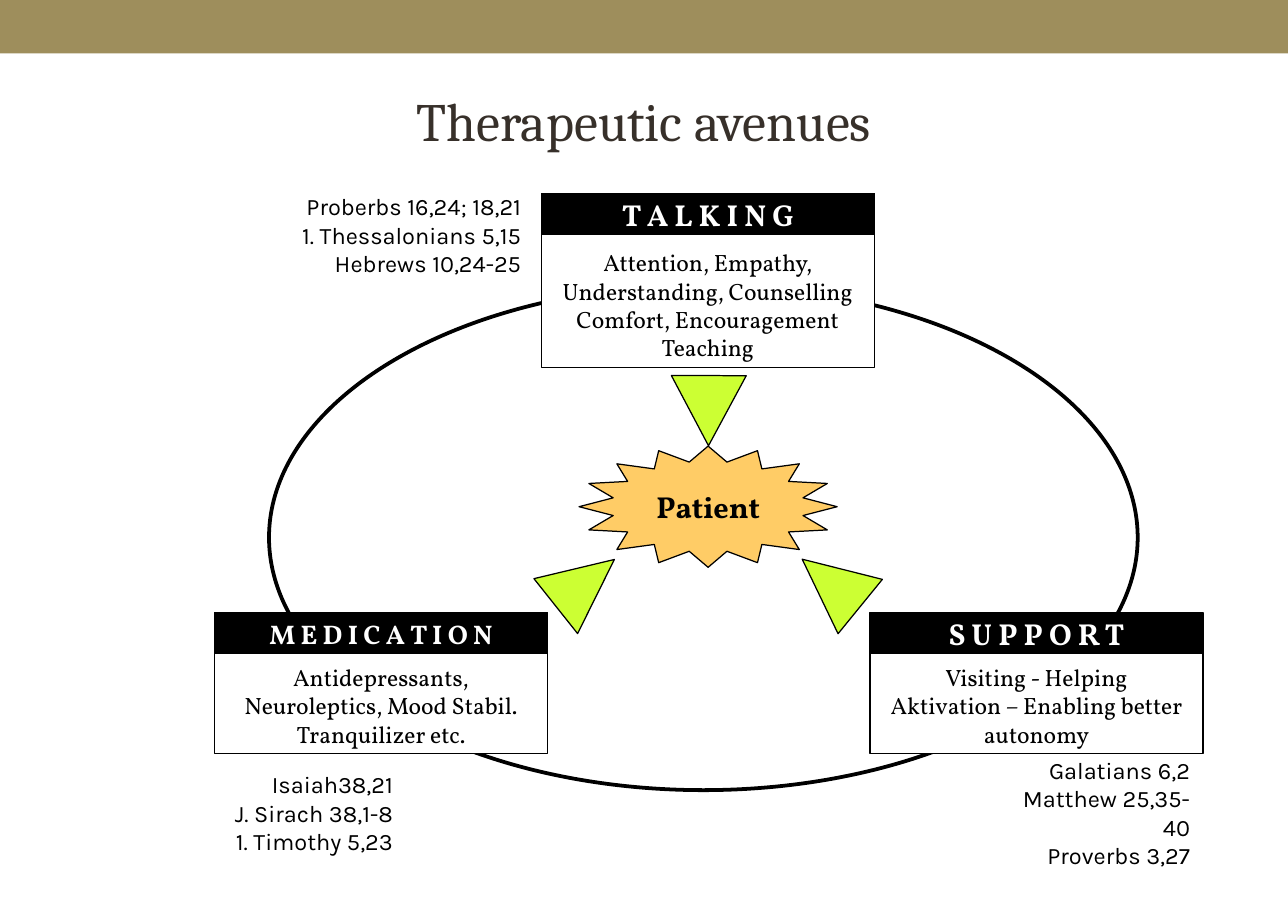
from dataclasses import dataclass

from pptx import Presentation
from pptx.dml.color import RGBColor
from pptx.enum.shapes import MSO_SHAPE
from pptx.enum.text import MSO_ANCHOR, PP_ALIGN
from pptx.util import Cm, Pt


@dataclass(frozen=True)
class Theme:
    band: str = "9E8E5C"
    title: str = "37302A"
    ink: str = "000000"
    paper: str = "FFFFFF"
    star: str = "FFCC66"
    arrow: str = "CCFF33"
    title_font: str = "Cambria"
    card_font: str = "Vollkorn"
    verse_font: str = "Karla"
    title_size: float = 32
    large: float = 18
    medium: float = 16
    body: float = 14
    thick: float = 2.25
    thin: float = 0.75


T = Theme()
SLIDE_W, SLIDE_H = 27, 19.05
CARD_W, HEADER_H = 6.98, 0.85

TITLE = "Therapeutic avenues"
CENTRE = "Patient"
CARDS = [
    {"head": "T A L K I N G", "size": T.large, "at": (11.35, 4.06), "height": 3.64,
     "lines": ["Attention, Empathy,", "Understanding, Counselling",
               "Comfort, Encouragement", "Teaching"]},
    {"head": "S U P P O R T", "size": T.large, "at": (18.24, 12.85), "height": 2.95,
     "lines": ["Visiting - Helping", "Aktivation – Enabling better", "autonomy"]},
    {"head": "M E D I C A T I O N", "size": T.medium, "at": (4.5, 12.85), "height": 2.95,
     "lines": ["Antidepressants,", "Neuroleptics, Mood Stabil.", "Tranquilizer etc."]},
]
ARROWS = [
    ((11.53, 11.43, 1.47, 1.57), 51.5),
    ((16.69, 11.43, 1.47, 1.57), 309.2),
    ((14.07, 7.87, 1.57, 1.47), 180.2),
]
VERSES = [
    ((5.77, 3.89, 5.41, 2.06),
     ["Proberbs 16,24; 18,21", "1. Thessalonians 5,15", "Hebrews 10,24-25"]),
    ((4.5, 16, 3.99, 2.06),
     ["Isaiah38,21", "J. Sirach 38,1-8", "1. Timothy 5,23"]),
    ((20.95, 16, 4.25, 2.06),
     ["Galatians 6,2", "Matthew 25,35-40", "Proverbs 3,27"]),
]


def write(sp, lines, font=T.card_font, size=T.body, color=T.ink, bold=False,
          align=PP_ALIGN.CENTER, anchor=MSO_ANCHOR.MIDDLE, wrap=True):
    tf = sp.text_frame
    tf.word_wrap = wrap
    tf.vertical_anchor = anchor
    for i, line in enumerate(lines):
        p = tf.paragraphs[0] if i == 0 else tf.add_paragraph()
        p.alignment = align
        r = p.add_run()
        r.text = line
        r.font.name = font
        r.font.size = Pt(size)
        r.font.bold = bold
        r.font.color.rgb = RGBColor.from_string(color)


def add_box(s, box):
    return s.shapes.add_textbox(*map(Cm, box))


def add_shape(s, kind, box, fill=None, line=T.ink, width=T.thin):
    sp = s.shapes.add_shape(kind, *map(Cm, box))
    sp.shadow.inherit = False
    for part, color in ((sp.fill, fill), (sp.line.fill, line)):
        if color:
            part.solid()
            part.fore_color.rgb = RGBColor.from_string(color)
        else:
            part.background()
    if line:
        sp.line.width = Pt(width)
    return sp


def add_card(s, card):
    x, y = card["at"]
    body = add_shape(s, MSO_SHAPE.RECTANGLE, (x, y, CARD_W, card["height"]), T.paper)
    write(body, card["lines"], anchor=MSO_ANCHOR.BOTTOM)
    header = add_shape(s, MSO_SHAPE.RECTANGLE, (x, y, CARD_W, HEADER_H), T.ink)
    write(header, [card["head"]], size=card["size"], color=T.paper, bold=True)


def main():
    prs = Presentation()
    prs.slide_width, prs.slide_height = Cm(SLIDE_W), Cm(SLIDE_H)
    s = prs.slides.add_slide(prs.slide_layouts[6])

    add_shape(s, MSO_SHAPE.RECTANGLE, (0, 0, SLIDE_W, 1.12), T.band, line=None)
    write(add_box(s, (1.35, 0.91, 24.31, 3.2)), [TITLE],
          font=T.title_font, size=T.title_size, color=T.title)

    add_shape(s, MSO_SHAPE.OVAL, (5.64, 5.97, 18.21, 10.59), width=T.thick)
    for card in CARDS:
        add_card(s, card)

    star = add_shape(s, MSO_SHAPE.STAR_16_POINT, (12.14, 9.35, 5.41, 2.54), T.star)
    star.adjustments[0] = 0.375
    write(star, [CENTRE], size=T.large, bold=True, wrap=False)

    for box, angle in ARROWS:
        add_shape(s, MSO_SHAPE.ISOSCELES_TRIANGLE, box, T.arrow).rotation = angle
    for box, lines in VERSES:
        write(add_box(s, box), lines, font=T.verse_font, align=PP_ALIGN.RIGHT)

    prs.save("out.pptx")


if __name__ == "__main__":
    main()
